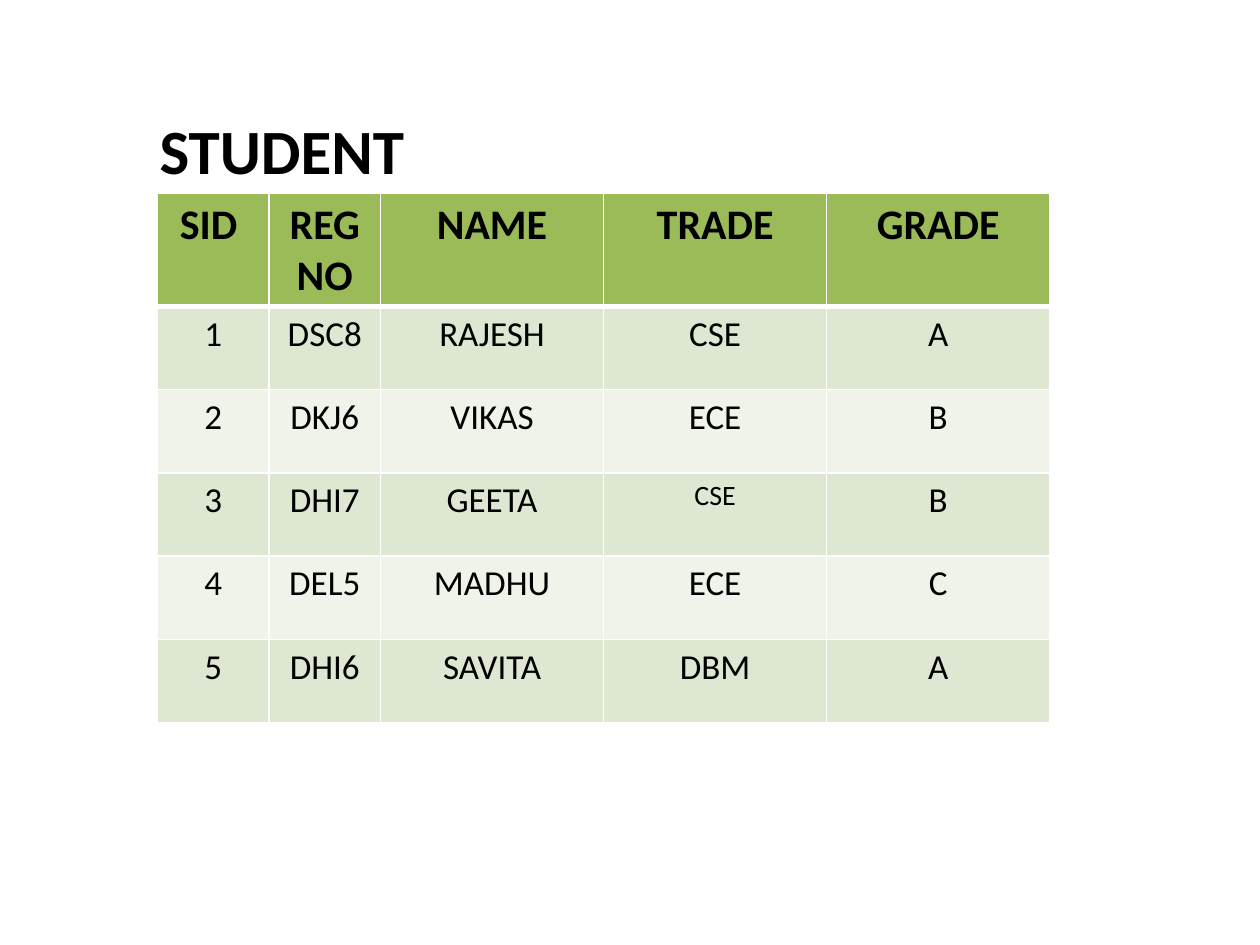
from lxml import etree
from pptx import Presentation
from pptx.dml.color import RGBColor
from pptx.enum import text as t
from pptx.oxml import ns
from pptx.util import Pt

COLORS = {"ink": "000000", "rule": "FFFFFF", "header": "9BBB59",
          "odd": "DEE7D1", "even": "EFF3EA"}
HEADINGS = ["SID ", "REGNO", "NAME", "TRADE", "GRADE"]
STUDENTS = [
    ["1", "DSC8", "RAJESH", "CSE", "A"],
    ["2", "DKJ6", "VIKAS", "ECE", "B"],
    ["3", "DHI7", "GEETA", "CSE", "B"],
    ["4", "DEL5", "MADHU", "ECE", "C"],
    ["5", "DHI6", "SAVITA", "DBM", "A"],
]
COLUMN_WIDTHS = [63.75, 63.75, 127.5, 127.5, 127.5]
ROW_HEIGHT = 47.6
SMALL_CELL = (3, 3)


def add_run(paragraph, words, size, bold):
    run = paragraph.add_run()
    run.text = words
    run.font.name = "Calibri"
    run.font.size = Pt(size)
    run.font.bold = bold
    run.font.color.rgb = RGBColor.from_string(COLORS["ink"])


def add_border(cell, side, width):
    props = cell._tc.get_or_add_tcPr()
    line = etree.SubElement(props, ns.qn(f"a:ln{side}"), w=str(Pt(width)))
    fill = etree.SubElement(line, ns.qn("a:solidFill"))
    etree.SubElement(fill, ns.qn("a:srgbClr"), val=COLORS["rule"])


prs = Presentation()
prs.slide_width, prs.slide_height = Pt(720), Pt(540)
slide = prs.slides.add_slide(prs.slide_layouts[5])

heading = slide.shapes.title
heading.left, heading.top, heading.width, heading.height = Pt(84), Pt(60), Pt(184), Pt(51)
frame = heading.text_frame
frame.word_wrap = False
frame.auto_size = t.MSO_AUTO_SIZE.SHAPE_TO_FIT_TEXT
frame.vertical_anchor = t.MSO_ANCHOR.TOP
frame.paragraphs[0].alignment = t.PP_ALIGN.LEFT
add_run(frame.paragraphs[0], "STUDENT", 36, True)

records = [HEADINGS] + STUDENTS
students = slide.shapes.add_table(
    len(records), len(HEADINGS), Pt(90), Pt(110.25),
    Pt(sum(COLUMN_WIDTHS)), Pt(ROW_HEIGHT * len(records))).table
for column, width in zip(students.columns, COLUMN_WIDTHS):
    column.width = Pt(width)

for r, record in enumerate(records):
    students.rows[r].height = Pt(ROW_HEIGHT)
    band = "header" if r == 0 else "odd" if r % 2 else "even"
    for c, words in enumerate(record):
        cell = students.cell(r, c)
        for side in "LRTB":
            thick = (r, side) in [(0, "B"), (1, "T")]
            add_border(cell, side, 3 if thick else 1)
        cell.fill.solid()
        cell.fill.fore_color.rgb = RGBColor.from_string(COLORS[band])
        paragraph = cell.text_frame.paragraphs[0]
        paragraph.alignment = t.PP_ALIGN.CENTER
        size = 24 if r == 0 else 16 if (r, c) == SMALL_CELL else 20
        add_run(paragraph, words, size, r == 0)

prs.save("out.pptx")
